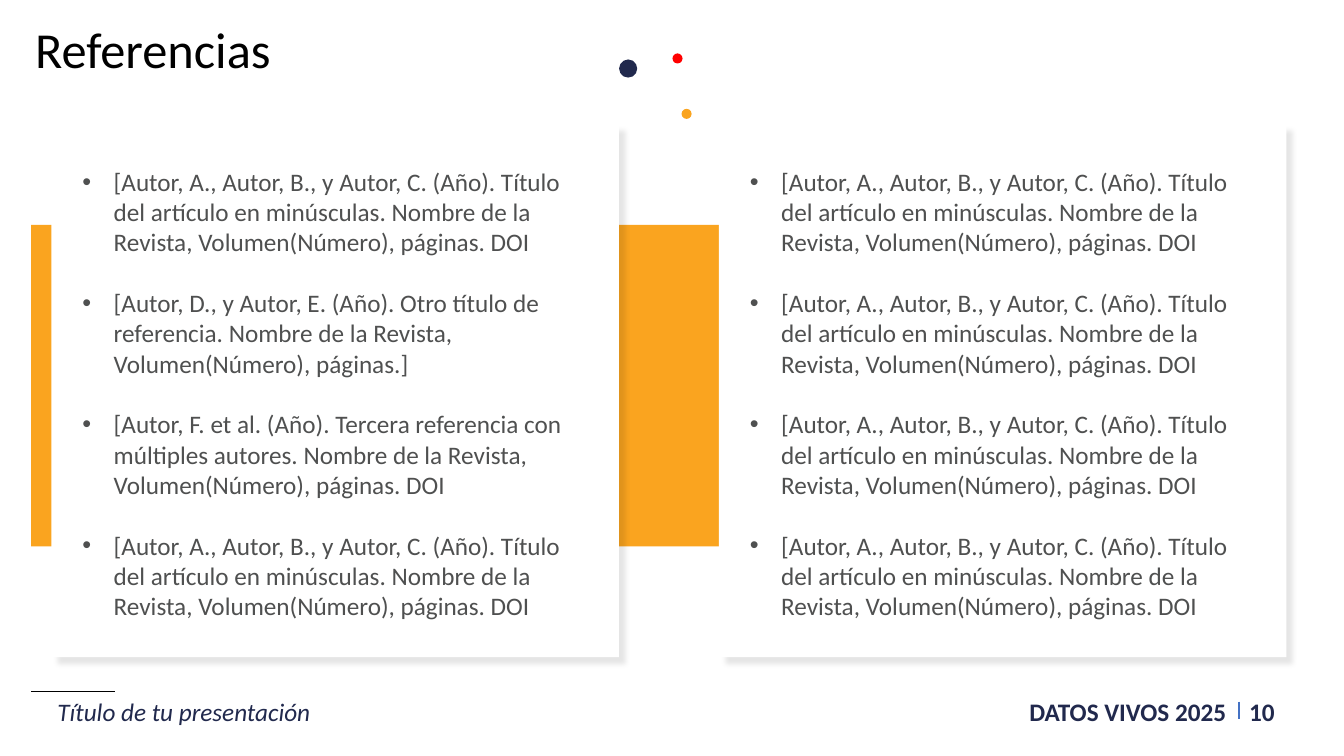
from lxml.etree import SubElement
from pptx import Presentation
from pptx.dml.color import RGBColor
from pptx.enum.shapes import MSO_CONNECTOR as CONNECTOR, MSO_SHAPE as SHAPE
from pptx.enum.text import MSO_ANCHOR as ANCHOR, PP_ALIGN as ALIGN
from pptx.oxml.ns import qn
from pptx.util import Inches, Pt

FONT = "Calibri"
NAVY, ORANGE, RED = "21294D", "FAA41F", "FF0000"
BLACK, WHITE, GREY, BLUE = "000000", "FFFFFF", "4F5050", "4472C4"

ARTICLE = (
    "[Autor, A., Autor, B., y Autor, C. (Año). Título del artículo en minúsculas. "
    "Nombre de la Revista, Volumen(Número), páginas. DOI"
)
LEFT_REFERENCES = [
    ARTICLE,
    "[Autor, D., y Autor, E. (Año). Otro título de referencia. "
    "Nombre de la Revista, Volumen(Número), páginas.]",
    "[Autor, F. et al. (Año). Tercera referencia con múltiples autores. "
    "Nombre de la Revista, Volumen(Número), páginas. DOI",
    ARTICLE,
]
RIGHT_REFERENCES = [ARTICLE] * 4


def rgb(color):
    """Turn a hex string into a colour."""
    return RGBColor.from_string(color)


def add_block(slide, kind, left, top, width, height, color):
    """Add a filled preset shape without outline or shadow."""
    block = slide.shapes.add_shape(
        kind, Inches(left), Inches(top), Inches(width), Inches(height)
    )
    block.shadow.inherit = False
    block.fill.solid()
    block.fill.fore_color.rgb = rgb(color)
    block.line.fill.background()
    return block


def add_rule(slide, x1, y1, x2, y2, color):
    """Add a thin straight line without shadow."""
    rule = slide.shapes.add_connector(
        CONNECTOR.STRAIGHT, Inches(x1), Inches(y1), Inches(x2), Inches(y2)
    )
    rule.line.color.rgb = rgb(color)
    rule.line.width = Pt(1)
    SubElement(rule._element.spPr, qn("a:effectLst"))


def add_text(slide, left, top, width, height, paragraphs, color, size=18,
             bold=False, italic=False, align=ALIGN.LEFT):
    """Add a wrapping text box with one style and return its frame."""
    frame = slide.shapes.add_textbox(
        Inches(left), Inches(top), Inches(width), Inches(height)
    ).text_frame
    frame.word_wrap = True
    frame.text = "\n".join(paragraphs)
    for paragraph in frame.paragraphs:
        paragraph.alignment = align
        font = paragraph.font
        font.name, font.size = FONT, Pt(size)
        font.bold, font.italic = bold, italic
        font.color.rgb = rgb(color)
    return frame


def add_title(slide, title):
    """Add the slide title across the top."""
    frame = add_text(slide, 0, 0.02, 13.33, 0.96, [title], BLACK, size=36)
    frame.vertical_anchor = ANCHOR.MIDDLE
    frame.margin_left, frame.margin_right = Inches(0.35), Inches(0.16)
    frame.margin_top, frame.margin_bottom = Inches(0.12), Inches(0.08)
    frame.paragraphs[0].line_spacing = 0.9


def add_card(slide, left):
    """Add a white card with a soft shadow to its lower right."""
    card = add_block(slide, SHAPE.RECTANGLE, left, 1.23, 5.63, 5.29, WHITE)
    effects = card._element.spPr.find(qn("a:effectLst"))
    shadow = SubElement(
        effects, qn("a:outerShdw"), blurRad=str(Pt(4)), dist=str(Pt(7)),
        dir=str(45 * 60000), algn="tl", rotWithShape="0"
    )
    tint = SubElement(shadow, qn("a:srgbClr"), val=BLACK)
    SubElement(tint, qn("a:alpha"), val="9000")


def add_references(slide, left, references):
    """Add a bulleted list with one line of space between entries."""
    frame = add_text(slide, left, 1.6, 5.14, 4.72, references, GREY)
    for paragraph in frame.paragraphs:
        paragraph.space_after = Pt(21.8)
        properties = paragraph._p.get_or_add_pPr()
        properties.set("marL", str(Inches(0.31)))
        properties.set("indent", str(-Inches(0.31)))
        bullet_font = properties.makeelement(qn("a:buFont"), {"typeface": "Arial"})
        bullet = properties.makeelement(qn("a:buChar"), {"char": "•"})
        properties.find(qn("a:defRPr")).addprevious(bullet_font)
        bullet_font.addnext(bullet)


def add_footer(slide):
    """Add the presentation name, event and page number."""
    add_text(slide, 12.29, 6.86, 0.68, 0.4, ["10"], NAVY, bold=True)
    add_rule(slide, 12.29, 6.96, 12.29, 7.13, BLUE)
    add_text(slide, 9.93, 6.86, 2.33, 0.4, ["DATOS VIVOS 2025"], NAVY,
             bold=True, align=ALIGN.RIGHT)
    add_rule(slide, 0.31, 6.86, 1.14, 6.86, BLACK)
    add_text(slide, 0.47, 6.86, 6.71, 0.4, ["Título de tu presentación"], NAVY,
             italic=True)


def main():
    """Build the references slide."""
    deck = Presentation()
    deck.slide_width, deck.slide_height = Inches(13.33), Inches(7.5)
    slide = deck.slides.add_slide(deck.slide_layouts[6])

    add_footer(slide)
    add_block(slide, SHAPE.RECTANGLE, 0.31, 2.23, 7.53, 3.19, ORANGE)
    for card_left, text_left, references in [
        (0.51, 0.72, LEFT_REFERENCES),
        (7.13, 7.34, RIGHT_REFERENCES),
    ]:
        add_card(slide, card_left)
        add_references(slide, text_left, references)
    for left, top, diameter, color in [
        (6.14, 0.59, 0.18, NAVY),
        (6.76, 1.08, 0.1, ORANGE),
        (6.67, 0.53, 0.1, RED),
    ]:
        add_block(slide, SHAPE.OVAL, left, top, diameter, diameter, color)
    add_title(slide, "Referencias")

    deck.save("out.pptx")


if __name__ == "__main__":
    main()
